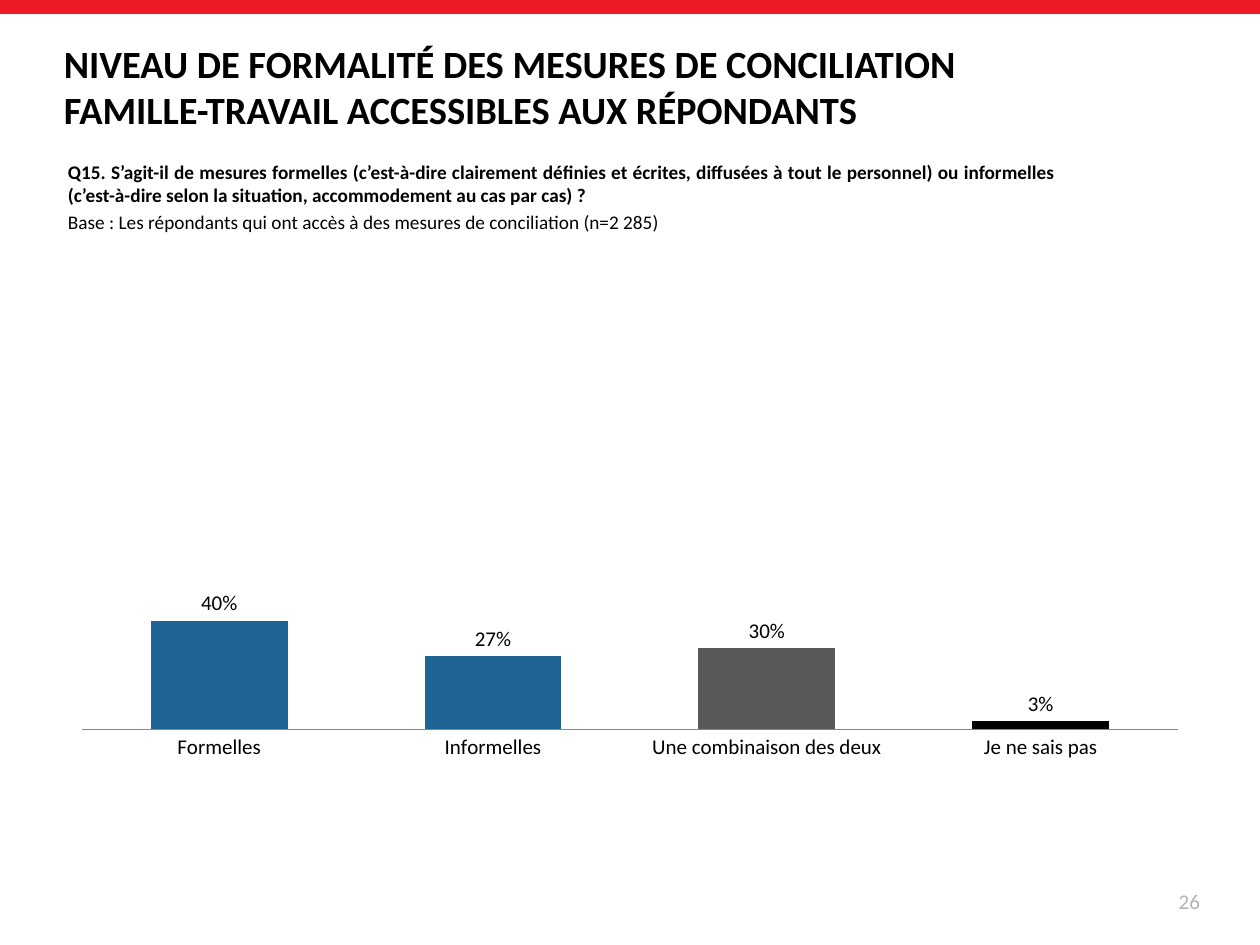
from dataclasses import dataclass

from lxml.etree import SubElement
from pptx import Presentation
from pptx.chart.data import CategoryChartData
from pptx.dml.color import RGBColor as Color
from pptx.enum.chart import XL_CHART_TYPE as ChartType
from pptx.enum.chart import XL_LABEL_POSITION as LabelPosition
from pptx.enum.chart import XL_TICK_MARK as TickMark
from pptx.enum.shapes import MSO_SHAPE as Preset
from pptx.enum.text import MSO_ANCHOR as Anchor
from pptx.enum.text import PP_ALIGN as Align
from pptx.oxml.ns import qn
from pptx.util import Cm, Pt


@dataclass(frozen=True)
class Theme:
    font: str = "Calibri"
    red: str = "ED1C24"
    blue: str = "1F6394"
    grey: str = "595959"
    axis: str = "868686"
    pale: str = "B3B3B3"
    black: str = "000000"
    title_size: int = 22
    question_size: int = 11
    small_size: int = 12


@dataclass(frozen=True)
class Frame:
    left: float
    top: float
    width: float
    height: float

    def lengths(self) -> tuple:
        return Cm(self.left), Cm(self.top), Cm(self.width), Cm(self.height)


@dataclass(frozen=True)
class Bar:
    label: str
    share: float
    color: str


THEME = Theme()
PLOT = Frame(0.017, 0.371, 0.966, 0.44)
BARS = [
    Bar("Formelles", 0.40, THEME.blue),
    Bar("Informelles", 0.27, THEME.blue),
    Bar("Une combinaison des deux", 0.30, THEME.grey),
    Bar("Je ne sais pas", 0.03, THEME.black),
]


def set_font(font, size: int, color: str, bold: bool = False) -> None:
    font.name = THEME.font
    font.size = Pt(size)
    font.bold = bold
    font.color.rgb = Color.from_string(color)


def add_box(page, frame: Frame, anchor=Anchor.TOP):
    box = page.shapes.add_textbox(*frame.lengths())
    box.text_frame.word_wrap = True
    box.text_frame.vertical_anchor = anchor
    return box


def write(para, text: str, *, size: int, color: str = THEME.black, bold: bool = False,
          align=Align.LEFT, before: float = 0) -> None:
    para.alignment = align
    if before:
        para.space_before = Pt(before)
    span = para.add_run()
    span.text = text
    set_font(span.font, size, color, bold)


def add_band(page, frame: Frame) -> None:
    band = page.shapes.add_shape(Preset.RECTANGLE, *frame.lengths())
    band.shadow.inherit = False
    band.fill.solid()
    band.fill.fore_color.rgb = Color.from_string(THEME.red)
    band.line.fill.background()


def place_plot(chart, plot: Frame) -> None:
    area = chart._chartSpace.chart.plotArea
    layout = area.find(qn("c:layout"))
    if layout is None:
        layout = SubElement(area, qn("c:layout"))
        area.insert(0, layout)
    manual = SubElement(layout, qn("c:manualLayout"))
    settings = [
        ("layoutTarget", "inner"), ("xMode", "edge"), ("yMode", "edge"),
        ("x", plot.left), ("y", plot.top), ("w", plot.width), ("h", plot.height),
    ]
    for name, value in settings:
        SubElement(manual, qn(f"c:{name}")).set("val", str(value))


def add_bar_chart(page, frame: Frame, bars: list[Bar]) -> None:
    data = CategoryChartData(number_format="0%")
    data.categories = [bar.label for bar in bars]
    data.add_series("Series 1", [bar.share for bar in bars])
    chart = page.shapes.add_chart(ChartType.COLUMN_CLUSTERED, *frame.lengths(), data).chart
    chart.has_legend = False
    chart.has_title = False
    set_font(chart.font, THEME.small_size, THEME.black)
    place_plot(chart, PLOT)

    categories = chart.category_axis
    categories.major_tick_mark = categories.minor_tick_mark = TickMark.NONE
    categories.format.line.color.rgb = Color.from_string(THEME.axis)
    values = chart.value_axis
    values.minimum_scale, values.maximum_scale = 0, 1
    values.has_major_gridlines = False
    values.visible = False

    columns = chart.plots[0]
    columns.gap_width = 100
    columns.vary_by_categories = False
    series = columns.series[0]
    for index, bar in enumerate(bars):
        fill = series.points[index].format.fill
        fill.solid()
        fill.fore_color.rgb = Color.from_string(bar.color)
    labels = series.data_labels
    labels.show_value = True
    labels.position = LabelPosition.OUTSIDE_END
    labels.number_format = "0%"
    labels.number_format_is_linked = False
    set_font(labels.font, THEME.small_size, THEME.black)


def main() -> None:
    deck = Presentation()
    deck.slide_width, deck.slide_height = Cm(25.4), Cm(19.05)
    page = deck.slides.add_slide(deck.slide_layouts[6])

    add_band(page, Frame(0, 0, 25.4, 0.28))
    add_bar_chart(page, Frame(1.27, 4.65, 22.86, 12.4), BARS)

    number = add_box(page, Frame(18.52, 17.65, 5.92, 1.02), Anchor.MIDDLE)
    write(number.text_frame.paragraphs[0], "26", size=THEME.small_size,
          color=THEME.pale, align=Align.RIGHT)

    question = add_box(page, Frame(1.12, 3.1, 20.42, 3)).text_frame
    write(question.paragraphs[0],
          "Q15. S’agit-il de mesures formelles (c’est-à-dire clairement définies et écrites, "
          "diffusées à tout le personnel) ou informelles (c’est-à-dire selon la situation, "
          "accommodement au cas par cas) ?",
          size=THEME.question_size, bold=True, align=Align.JUSTIFY)
    write(question.add_paragraph(),
          "Base : Les répondants qui ont accès à des mesures de conciliation (n=2 285)",
          size=THEME.question_size, align=Align.JUSTIFY, before=2.2)

    title = add_box(page, Frame(1.04, 1.07, 19.46, 1.32), Anchor.MIDDLE)
    write(title.text_frame.paragraphs[0],
          "NIVEAU DE FORMALITÉ DES MESURES DE CONCILIATION FAMILLE-TRAVAIL "
          "ACCESSIBLES AUX RÉPONDANTS",
          size=THEME.title_size, bold=True)

    deck.save("out.pptx")


if __name__ == "__main__":
    main()
